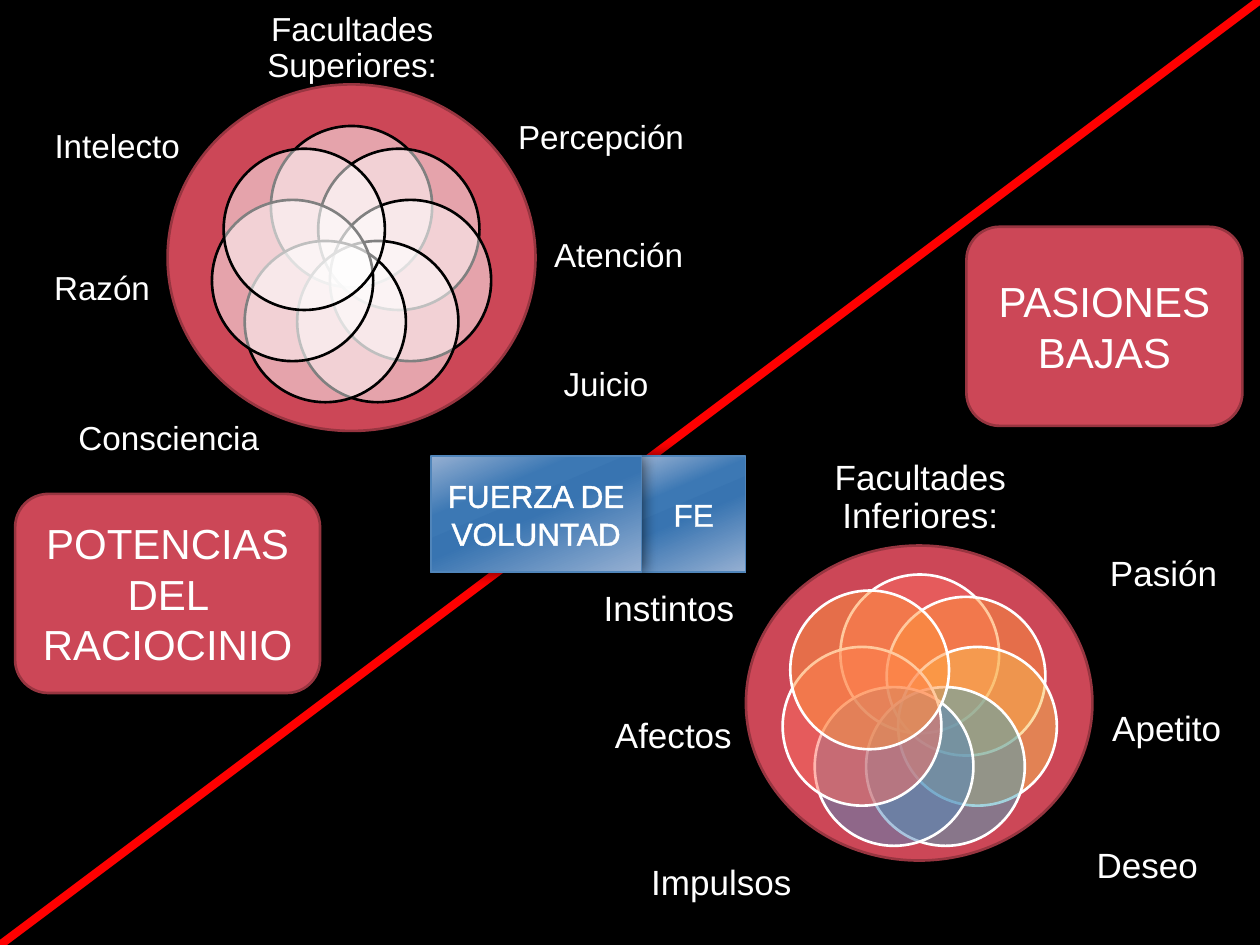
import math
from dataclasses import dataclass

from lxml import etree
from pptx import Presentation
from pptx import util as u
from pptx.dml import color
from pptx.enum import shapes, text
from pptx.oxml import ns

SCALE = 9144


@dataclass(frozen=True)
class Theme:
    font: str = "Arial"
    back: str = "000000"
    ink: str = "FFFFFF"
    rose: str = "CC4757"
    rose_edge: str = "973540"
    slash: str = "FF0000"
    steel_edge: str = "5085BA"
    steel: tuple = ((0, "96B0D2"), (30, "3C78B4"), (50, "3874B1"), (100, "96B0D2"))
    upper_petals: tuple = ("FFFFFF",) * 7
    lower_petals: tuple = ("FF6F61", "FF953E", "F8BD52", "46A6BD", "5488BC", "FF6F61", "FF953E")
    upper_size: int = 19
    lower_size: int = 20
    panel_size: int = 24
    bridge_size: int = 18


THEME = Theme()


def px(*lengths):
    return [u.Emu(round(length * SCALE)) for length in lengths]


def rgb(value):
    return color.RGBColor.from_string(value)


def child(parent, tag, **values):
    attributes = {name: str(value) for name, value in values.items()}
    return etree.SubElement(parent, ns.qn(tag), attributes)


def apply(target, values):
    for name, value in values.items():
        setattr(target, name, value)


def add_block(holder, kind, box, fill, edge, width=1.5):
    block = holder.shapes.add_shape(kind, *px(*box))
    block.shadow.inherit = False
    if fill:
        block.fill.solid()
        block.fill.fore_color.rgb = rgb(fill)
    block.line.color.rgb = rgb(edge)
    block.line.width = u.Pt(width)
    return block


def write(shape, words, size):
    apply(shape.text_frame, {"word_wrap": True, "vertical_anchor": text.MSO_ANCHOR.MIDDLE})
    para = shape.text_frame.paragraphs[0]
    para.alignment = text.PP_ALIGN.CENTER
    span = para.add_run()
    apply(span, {"text": words})
    apply(span.font, {"name": THEME.font, "size": u.Pt(size)})
    span.font.color.rgb = rgb(THEME.ink)
    return para, span


def add_label(holder, box, words, size):
    label = holder.shapes.add_textbox(*px(*box))
    para, _ = write(label, words, size)
    sides = ("left", "top", "right", "bottom")
    apply(label.text_frame, {f"margin_{side}": 0 for side in sides})
    apply(para, {"line_spacing": 0.9, "space_after": u.Pt(0)})
    after = para._p.pPr.find(ns.qn("a:spcAft"))
    after.clear()
    child(after, "a:spcPct", val=35000)


def add_petal(holder, box, fill, edge):
    petal = add_block(holder, shapes.MSO_SHAPE.OVAL, box, fill, edge)
    tint = petal._element.spPr.find(ns.qn("a:solidFill")).find(ns.qn("a:srgbClr"))
    child(tint, "a:alpha", val=50000)


def add_flower(page, box, hub, ring, diameter, petals, edge, labels, size, nudges):
    left, top, _, _ = box
    add_block(page, shapes.MSO_SHAPE.OVAL, box, THEME.rose, THEME.rose_edge)
    group = page.shapes.add_group_shape()
    for index, (fill, label) in enumerate(zip(petals, labels)):
        turn = 2 * math.pi * index / len(petals)
        nudge_x, nudge_y = nudges.get(index, (0, 0))
        x = left + hub[0] + ring * math.sin(turn) - diameter / 2 + nudge_x
        y = top + hub[1] - ring * math.cos(turn) - diameter / 2 + nudge_y
        add_petal(group, (x, y, diameter, diameter), fill, edge)
        words, dx, dy, width, height = label
        add_label(group, (left + dx, top + dy, width, height), words, size)


def add_panel(page, box, words):
    panel = add_block(page, shapes.MSO_SHAPE.ROUNDED_RECTANGLE, box, THEME.rose, THEME.rose_edge)
    write(panel, words, THEME.panel_size)


def add_slash(page, width, height):
    slash = page.shapes.add_connector(shapes.MSO_CONNECTOR.STRAIGHT, *px(0, height, width, 0))
    slash.line.color.rgb = rgb(THEME.slash)
    slash.line.width = u.Pt(4.75)
    child(slash._element.spPr, "a:effectLst")


def add_bridge_part(page, box, words):
    part = add_block(page, shapes.MSO_SHAPE.RECTANGLE, box, None, THEME.steel_edge, 0.75)
    part.fill.gradient()
    part.fill.gradient_angle = 360 - 67
    properties = part._element.spPr
    stops = properties.find(ns.qn("a:gradFill")).find(ns.qn("a:gsLst"))
    stops.clear()
    for place, value in THEME.steel:
        child(child(stops, "a:gs", pos=place * 1000), "a:srgbClr", val=value)
    effects = properties.find(ns.qn("a:effectLst"))
    shadow = child(effects, "a:outerShdw", blurRad=u.Pt(8.7), dist=0, dir=0, rotWithShape=0)
    child(child(shadow, "a:srgbClr", val="000000"), "a:alpha", val=65000)
    _, span = write(part, words, THEME.bridge_size)
    outline = etree.Element(ns.qn("a:ln"), {"w": str(u.Pt(1.45))})
    child(child(outline, "a:solidFill"), "a:srgbClr", val=THEME.ink)
    span._r.get_or_add_rPr().insert(0, outline)


def add_bridge(page, box):
    left, top, width, height = box
    split = round(width * 2 / 3)
    add_bridge_part(page, (left + split, top, width - split, height), "FE")
    add_bridge_part(page, (left, top, split, height), "FUERZA DE VOLUNTAD")


def main():
    deck = Presentation()
    width, height = 1000, 750
    deck.slide_width, deck.slide_height = px(width, height)
    page = deck.slides.add_slide(deck.slide_layouts[6])
    page.background.fill.solid()
    page.background.fill.fore_color.rgb = rgb(THEME.back)

    upper_labels = [
        ("Facultades Superiores:", 34, -67, 225, 78),
        ("Percepción", 275, 0, 138, 86),
        ("Atención", 290, 91, 136, 92),
        ("Juicio", 275, 197, 146, 84),
        ("Consciencia", -72, 240, 146, 84),
        ("Razón", -120, 117, 136, 92),
        ("Intelecto", -109, 7, 138, 86),
    ]
    lower_labels = [
        ("Facultades Inferiores:", 66, -76, 145, 77),
        ("Pasión", 263, -24, 137, 95),
        ("Apetito", 262, 101, 144, 91),
        ("Deseo", 246, 222, 145, 66),
        ("Impulsos", -79, 229, 119, 80),
        ("Afectos", -131, 117, 147, 70),
        ("Instintos", -121, 17, 120, 69),
    ]
    add_flower(page, (133, 67, 292, 275), (146, 145), 48, 128, THEME.upper_petals,
               THEME.back, upper_labels, THEME.upper_size, {})
    add_flower(page, (592, 433, 275, 250), (138, 133), 47, 126, THEME.lower_petals,
               THEME.ink, lower_labels, THEME.lower_size, {6: (-3, -5)})
    add_panel(page, (12, 392, 242, 158), "POTENCIAS DEL RACIOCINIO")
    add_panel(page, (767, 180, 219, 158), "PASIONES BAJAS")
    add_slash(page, width, height)
    add_bridge(page, (342, 362, 250, 92))
    deck.save("out.pptx")


if __name__ == "__main__":
    main()
